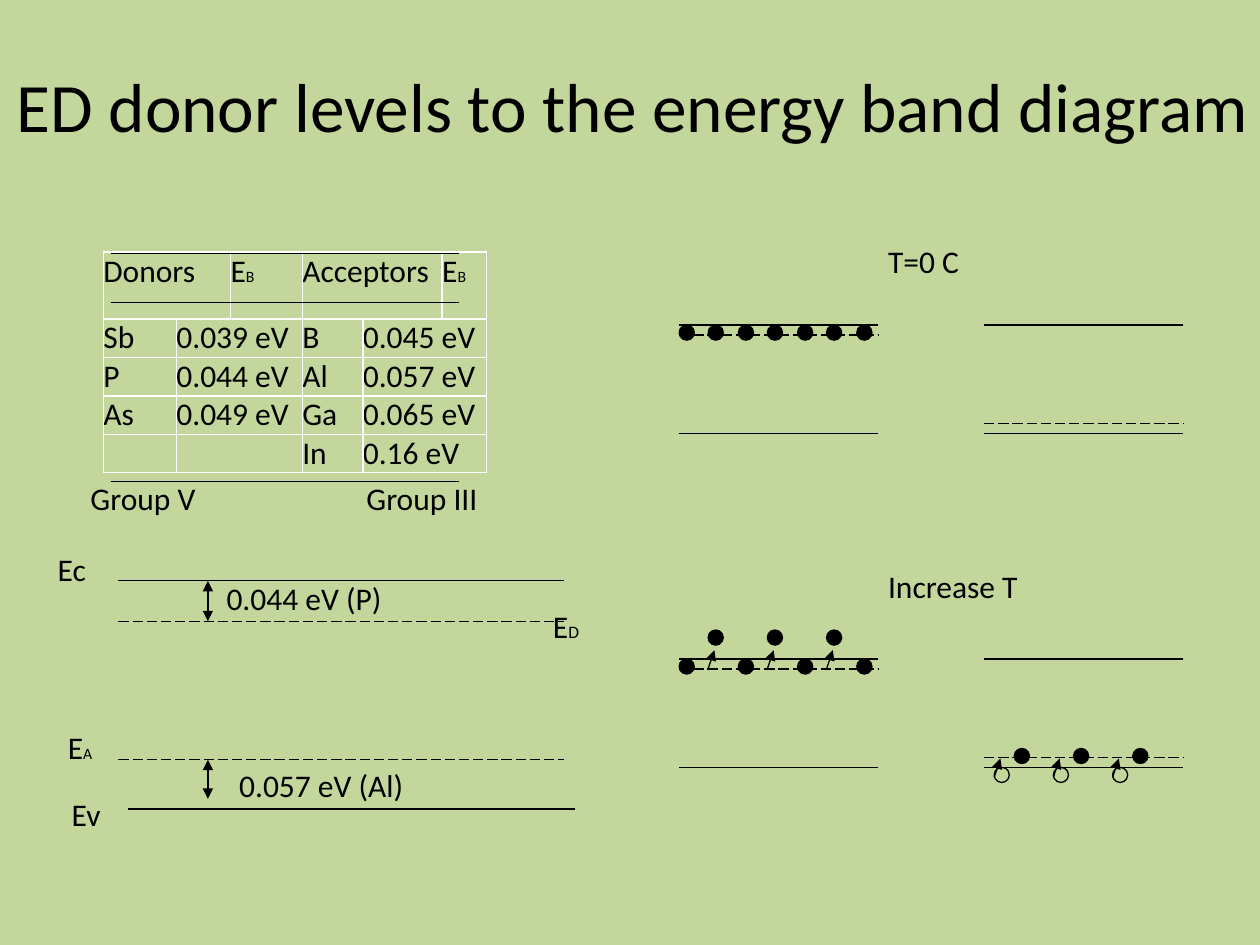
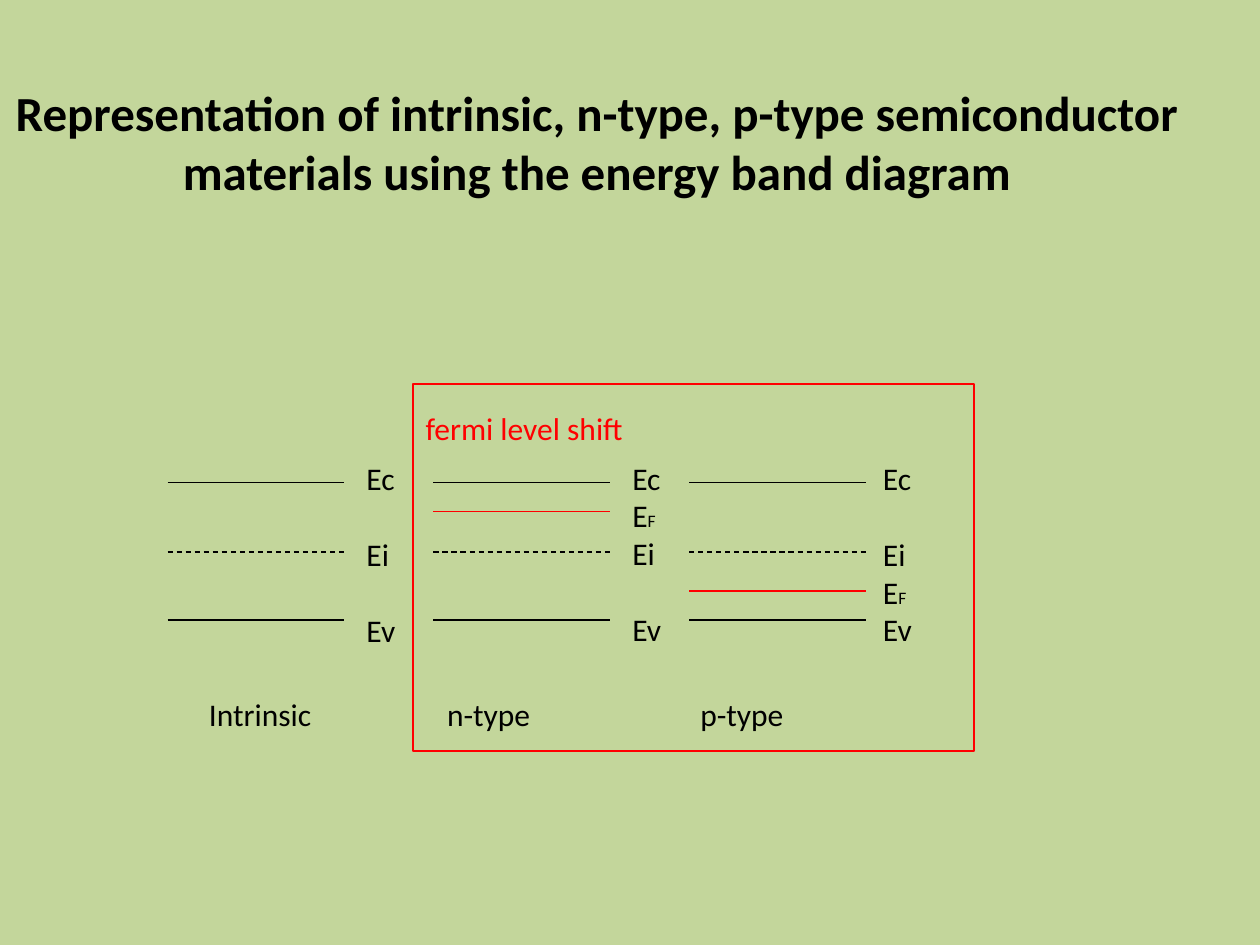
from dataclasses import dataclass

from lxml import etree
from pptx import Presentation
from pptx import util as u
from pptx.dml.color import RGBColor
from pptx.enum import dml, shapes, text
from pptx.oxml import ns

EMU_PER_PX = 9144
FONT = "Calibri"
BODY_SIZE = 18
LINE_PITCH = 22
SUBSCRIPT_SIZES = {"A": 9, "B": 9, "D": 10, "F": 10}
GREEN = RGBColor(0xC3, 0xD6, 0x9B)
BLACK = RGBColor(0x00, 0x00, 0x00)
RED = RGBColor(0xFF, 0x00, 0x00)
LONG_DASH = dml.MSO_LINE.LONG_DASH
DASH = dml.MSO_LINE.DASH
TITLE_ONLY = 5
DOT_SIZE = 12

DOPANT_COLUMNS = (58, 43, 57, 48, 63, 35)
DOPANT_ROWS = (
    ("Donors", "E_B", "Acceptors", "E_B"),
    ("Sb", "0.039 eV", "B", "0.045 eV"),
    ("P", "0.044 eV", "Al", "0.057 eV"),
    ("As", "0.049 eV", "Ga", "0.065 eV"),
    ("", "", "In", "0.16 eV"),
)
HEADER_SPANS = ((0, 1), (2, 2), (3, 4), (5, 5))
VALUE_SPANS = ((0, 0), (1, 2), (3, 3), (4, 5))


@dataclass(frozen=True)
class Label:
    content: str
    left: int
    top: int
    width: int
    height: int = 40
    color: RGBColor = BLACK


@dataclass(frozen=True)
class Line:
    start: tuple[int, int]
    end: tuple[int, int]
    color: RGBColor = BLACK
    dash: dml.MSO_LINE | None = None
    arrows: tuple[str, ...] = ()


@dataclass(frozen=True)
class Material:
    name: str
    name_left: int
    name_width: int
    band_left: int
    levels_left: int
    levels: tuple[tuple[str, int], ...]
    fermi_y: int | None = None


MATERIALS = (
    Material("Intrinsic", 156, 101, 133, 281, (("Ec", 0), ("Ei", 2), ("Ev", 4))),
    Material("n-type", 345, 86, 344, 492,
             (("Ec", 0), ("E_F", 1), ("Ei", 2), ("Ev", 4)), 406),
    Material("p-type", 546, 86, 547, 691,
             (("Ec", 0), ("Ei", 2), ("E_F", 3), ("Ev", 4)), 469),
)


def px(length: int) -> u.Emu:
    return u.Emu(length * EMU_PER_PX)


def write(paragraph, content: str, color: RGBColor = BLACK) -> None:
    symbol, _, subscript = content.partition("_")
    paragraph.font.name = FONT
    paragraph.font.size = u.Pt(BODY_SIZE)
    paragraph.font.color.rgb = color
    paragraph.add_run().text = symbol
    if subscript:
        run = paragraph.add_run()
        run.text = subscript
        run.font.size = u.Pt(SUBSCRIPT_SIZES[subscript])


def text_frame(slide, left: int, top: int, width: int, height: int):
    frame = slide.shapes.add_textbox(px(left), px(top), px(width), px(height)).text_frame
    frame.word_wrap = False
    return frame


def draw_label(slide, label: Label) -> None:
    frame = text_frame(slide, label.left, label.top, label.width, label.height)
    write(frame.paragraphs[0], label.content, label.color)


def draw_line(slide, line: Line) -> None:
    connector = slide.shapes.add_connector(
        shapes.MSO_CONNECTOR.STRAIGHT, *map(px, line.start + line.end))
    connector.line.color.rgb = line.color
    connector.line.width = u.Pt(0.75)
    if line.dash:
        connector.line.dash_style = line.dash
    for end in line.arrows:
        etree.SubElement(connector.line._get_or_add_ln(), ns.qn(f"a:{end}"), type="triangle")
    etree.SubElement(connector._element.spPr, ns.qn("a:effectLst"))


def draw_level(slide, left: int, y: int, width: int, color: RGBColor = BLACK,
               dash: dml.MSO_LINE | None = None) -> None:
    draw_line(slide, Line((left, y), (left + width, y), color, dash))


def draw_outline(slide, kind: shapes.MSO_SHAPE, left: int, top: int, width: int, height: int,
                 color: RGBColor, weight: float, filled: bool = False) -> None:
    outline = slide.shapes.add_shape(kind, px(left), px(top), px(width), px(height))
    outline.shadow.inherit = False
    outline.line.color.rgb = color
    outline.line.width = u.Pt(weight)
    if filled:
        outline.fill.solid()
        outline.fill.fore_color.rgb = color
    else:
        outline.fill.background()


def draw_carrier(slide, left: int, top: int, filled: bool = True) -> None:
    draw_outline(slide, shapes.MSO_SHAPE.OVAL, left, top, DOT_SIZE, DOT_SIZE,
                 BLACK, 0.75, filled)


def draw_jump(slide, left: int, bottom: int) -> None:
    draw_line(slide, Line((left, bottom), (left + 5, bottom - 15), arrows=("tailEnd",)))


def add_slide(prs, title: str, left: int, top: int, width: int, size: float, bold: bool):
    slide = prs.slides.add_slide(prs.slide_layouts[TITLE_ONLY])
    heading = slide.shapes.title
    heading.left, heading.top, heading.width, heading.height = map(px, (left, top, width, 125))
    frame = heading.text_frame
    frame.text = title
    frame.word_wrap = True
    frame.auto_size = text.MSO_AUTO_SIZE.NONE
    frame.vertical_anchor = text.MSO_ANCHOR.MIDDLE
    paragraph = frame.paragraphs[0]
    paragraph.alignment = text.PP_ALIGN.CENTER
    paragraph.font.name = FONT
    paragraph.font.size = u.Pt(size)
    paragraph.font.bold = bold
    paragraph.font.color.rgb = BLACK
    return slide


def draw_dopant_table(slide) -> None:
    heights = (53, 30, 30, 30, 30)
    table = slide.shapes.add_table(
        len(DOPANT_ROWS), len(DOPANT_COLUMNS), px(82), px(200),
        px(sum(DOPANT_COLUMNS)), px(sum(heights))).table
    table.first_row = False
    table.horz_banding = False
    for column, width in zip(table.columns, DOPANT_COLUMNS):
        column.width = px(width)
    for row, height in zip(table.rows, heights):
        row.height = px(height)
        for cell in row.cells:
            cell.fill.background()
            cell.margin_left = cell.margin_right = cell.margin_top = cell.margin_bottom = 0
    for row_index, entries in enumerate(DOPANT_ROWS):
        spans = VALUE_SPANS if row_index else HEADER_SPANS
        for entry, (first, last) in zip(entries, spans):
            cell = table.cell(row_index, first)
            if last > first:
                cell.merge(table.cell(row_index, last))
            write(cell.text_frame.paragraphs[0], entry)
    for rule_y in (201, 240, 382):
        draw_level(slide, 88, rule_y, 276)


def draw_donor_slide(prs) -> None:
    slide = add_slide(prs, "ED donor levels to the energy band diagram", -12, 21, 1028, 39.6, False)
    draw_dopant_table(slide)

    for left, y, dash in ((94, 461, None), (94, 493, LONG_DASH),
                          (94, 603, LONG_DASH), (102, 642, None)):
        draw_level(slide, left, y, 354, dash=dash)
    for top, bottom in ((461, 493), (603, 634)):
        draw_line(slide, Line((165, top), (165, bottom), arrows=("headEnd", "tailEnd")))

    for label in (
        Label("Ec", 36, 432, 49),
        Label("Ev", 47, 626, 49),
        Label("E_D", 429, 477, 47),
        Label("E_A", 44, 573, 45),
        Label("0.044 eV (P)", 170, 455, 160),
        Label("0.057 eV (Al)", 180, 603, 166),
        Label("Group V", 62, 375, 114),
        Label("Group III", 281, 375, 118),
        Label("T=0 C", 695, 187, 90),
        Label("Increase T", 695, 445, 139),
    ):
        draw_label(slide, label)

    donor_left, acceptor_left, band_width = 539, 781, 158
    for conduction_y in (258, 523):
        valence_y = conduction_y + 86
        for left in (donor_left, acceptor_left):
            draw_level(slide, left, conduction_y, band_width)
            draw_level(slide, left, valence_y, band_width)
        draw_level(slide, donor_left, conduction_y + 8, band_width, dash=LONG_DASH)
        draw_level(slide, acceptor_left, valence_y - 8, band_width, dash=LONG_DASH)

    for site in range(7):
        left = donor_left + site * 47 // 2
        excited = site % 2 == 1
        draw_carrier(slide, left, 258)
        draw_carrier(slide, left, 500 if excited else 523)
        if excited:
            draw_jump(slide, left, 531)
    for site in range(3):
        left = 789 + site * 47
        draw_carrier(slide, left + 16, 594)
        draw_carrier(slide, left, 609, filled=False)
        draw_jump(slide, left, 617)


def draw_material(slide, material: Material) -> None:
    for y, dash in ((383, None), (438, DASH), (492, None)):
        draw_level(slide, material.band_left, y, 140, dash=dash)
    if material.fermi_y:
        draw_level(slide, material.band_left, material.fermi_y, 140, RED)
    frame = text_frame(slide, material.levels_left, 359, 44, 162)
    previous = -1
    for index, (level, row) in enumerate(material.levels):
        paragraph = frame.add_paragraph() if index else frame.paragraphs[0]
        paragraph.space_before = u.Pt(LINE_PITCH * (row - previous - 1))
        write(paragraph, level)
        previous = row
    draw_label(slide, Label(material.name, material.name_left, 547, material.name_width))


def draw_materials_slide(prs) -> None:
    slide = add_slide(
        prs,
        "Representation of intrinsic, n-type, p-type semiconductor "
        "materials using the energy band diagram",
        0, 70, 947, 28, True)
    slide.shapes.title.text_frame.margin_bottom = px(46)
    for material in MATERIALS:
        draw_material(slide, material)
    draw_label(slide, Label("fermi level shift", 328, 320, 187, color=RED))
    draw_outline(slide, shapes.MSO_SHAPE.RECTANGLE, 328, 305, 445, 291, RED, 1)


def main() -> None:
    prs = Presentation()
    prs.slide_width, prs.slide_height = px(1000), px(750)
    background = prs.slide_master.background.fill
    background.solid()
    background.fore_color.rgb = GREEN
    draw_donor_slide(prs)
    draw_materials_slide(prs)
    prs.save("out.pptx")


if __name__ == "__main__":
    main()
